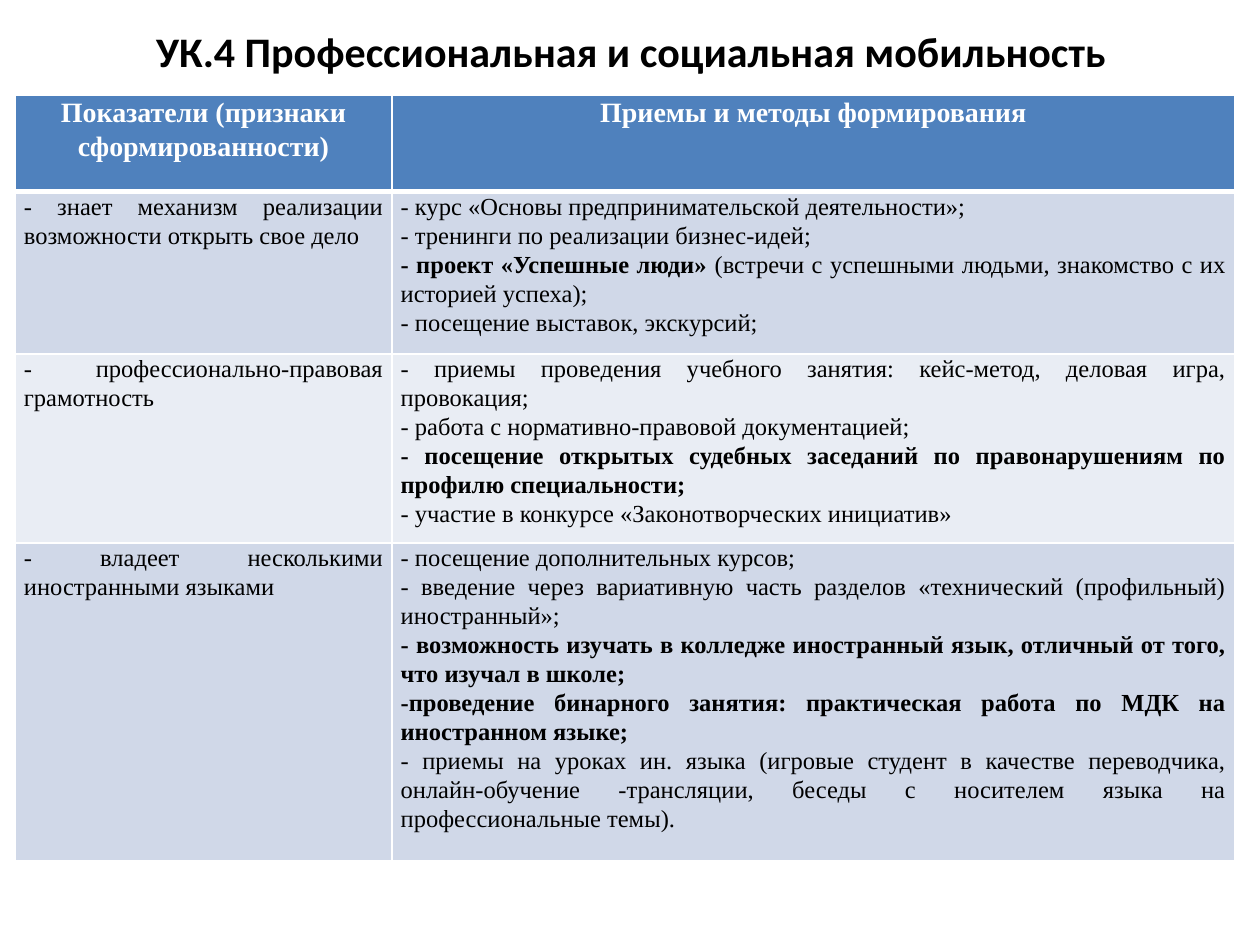
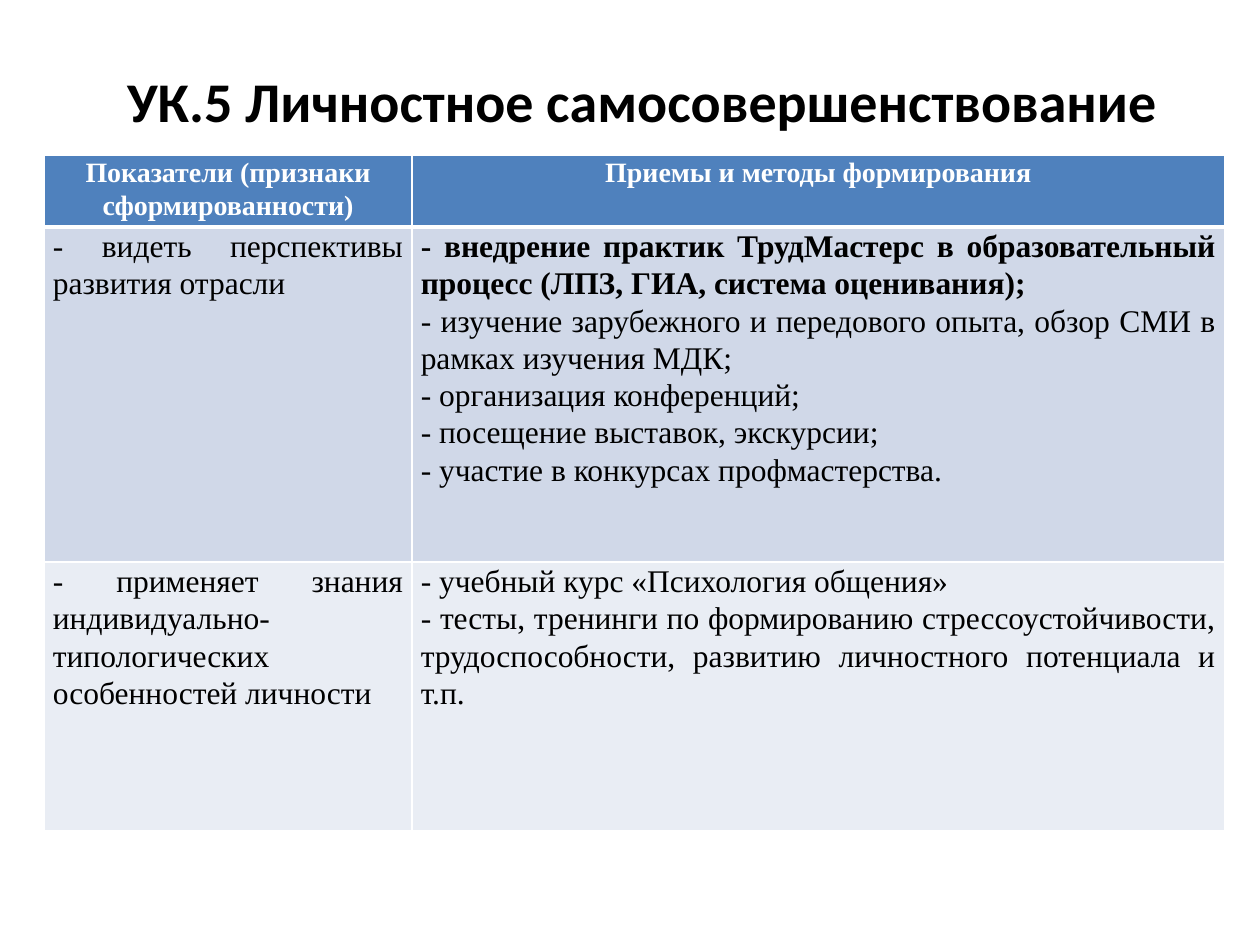
from dataclasses import dataclass

import lxml.etree
import pptx
import pptx.dml.color
import pptx.enum.text
import pptx.oxml.ns
import pptx.util

COLORS = {
    "background": "FFFFFF",
    "title": "000000",
    "body": "000000",
    "header_text": "FFFFFF",
    "header_fill": "4F81BD",
    "odd_row": "D0D8E8",
    "even_row": "E9EDF4",
    "border": "FFFFFF",
}
TITLE_FONT = "Calibri"
TABLE_FONT = "Times New Roman"
HEADER_SIZE = 16
LINE_SPACING = 1.07
SLIDE_WIDTH = pptx.util.Inches(10)
SLIDE_HEIGHT = pptx.util.Inches(7.5)
GRID_COLUMNS = 100
GRID_ROWS = 75
CENTER = pptx.enum.text.PP_ALIGN.CENTER
JUSTIFY = pptx.enum.text.PP_ALIGN.JUSTIFY


@dataclass(frozen=True)
class Area:
    column: float
    row: float
    columns: float
    rows: float


@dataclass(frozen=True)
class Line:
    plain: str = ""
    bold: str = ""


@dataclass(frozen=True)
class Indicator:
    sign: str
    methods: tuple[Line, ...]


@dataclass(frozen=True)
class Competence:
    title: str
    title_area: Area
    title_size: int
    table_column: float
    table_row: float
    column_widths: tuple[float, float]
    row_heights: tuple[float, ...]
    body_size: int
    indicators: tuple[Indicator, ...]


HEADERS = ("Показатели (признаки сформированности)", "Приемы и методы формирования")

COMPETENCES = (
    Competence(
        title="УК.4 Профессиональная и социальная мобильность",
        title_area=Area(5.1, 1.3, 90, 5.5),
        title_size=24,
        table_column=1.2,
        table_row=7.6,
        column_widths=(29.9, 66.9),
        row_heights=(7.6, 12.9, 15, 25.2),
        body_size=14,
        indicators=(
            Indicator("- знает механизм реализации возможности открыть свое дело", (
                Line("- курс «Основы предпринимательской деятельности»;"),
                Line("- тренинги по реализации бизнес-идей;"),
                Line("(встречи с успешными людьми, знакомство с их историей успеха);",
                     bold="- проект «Успешные люди» "),
                Line("- посещение выставок, экскурсий;"),
            )),
            Indicator("- профессионально-правовая грамотность", (
                Line("- приемы проведения учебного занятия: кейс-метод, деловая игра, провокация;"),
                Line("- работа с нормативно-правовой документацией;"),
                Line(bold="- посещение открытых судебных заседаний по правонарушениям "
                          "по профилю специальности;"),
                Line("- участие в конкурсе «Законотворческих инициатив»"),
            )),
            Indicator("- владеет несколькими иностранными языками", (
                Line("- посещение дополнительных курсов;"),
                Line("- введение через вариативную часть разделов "
                     "«технический (профильный) иностранный»;"),
                Line(bold="- возможность изучать в колледже иностранный язык, "
                          "отличный от того, что изучал в школе;"),
                Line(bold="-проведение бинарного занятия: практическая работа "
                          "по МДК на иностранном языке;"),
                Line("- приемы на уроках ин. языка (игровые студент в качестве переводчика, "
                     "онлайн-обучение -трансляции, беседы с носителем языка "
                     "на профессиональные темы)."),
            )),
        ),
    ),
    Competence(
        title="УК.5 Личностное самосовершенствование",
        title_area=Area(2, 5.2, 98, 5.5),
        title_size=32,
        table_column=3.5,
        table_row=12.3,
        column_widths=(29.2, 64.5),
        row_heights=(5.7, 26.6, 21.3),
        body_size=18,
        indicators=(
            Indicator("- видеть перспективы развития отрасли", (
                Line(bold="- внедрение практик ТрудМастерс в образовательный процесс "
                          "(ЛПЗ, ГИА, система оценивания);"),
                Line("- изучение зарубежного и передового опыта, обзор СМИ "
                     "в рамках изучения МДК;"),
                Line("- организация конференций;"),
                Line("- посещение выставок, экскурсии;"),
                Line("- участие в конкурсах профмастерства."),
            )),
            Indicator("- применяет знания индивидуально-типологических особенностей личности", (
                Line("- учебный курс «Психология общения»"),
                Line("- тесты, тренинги по формированию стрессоустойчивости, "
                     "трудоспособности, развитию личностного потенциала и т.п."),
            )),
        ),
    ),
)


def color(name: str) -> pptx.dml.color.RGBColor:
    return pptx.dml.color.RGBColor.from_string(COLORS[name])


def across(columns: float) -> int:
    return round(SLIDE_WIDTH * columns / GRID_COLUMNS)


def down(rows: float) -> int:
    return round(SLIDE_HEIGHT * rows / GRID_ROWS)


def style_font(font, name: str, size: int, color_name: str, bold: bool) -> None:
    font.name = name
    font.size = pptx.util.Pt(size)
    font.bold = bold
    font.color.rgb = color(color_name)


def draw_title(page, competence: Competence) -> None:
    area = competence.title_area
    box = page.shapes.add_textbox(
        across(area.column), down(area.row), across(area.columns), down(area.rows))
    frame = box.text_frame
    frame.word_wrap = True
    frame.vertical_anchor = pptx.enum.text.MSO_ANCHOR.MIDDLE
    frame.text = competence.title
    para = frame.paragraphs[0]
    para.alignment = CENTER
    style_font(para.runs[0].font, TITLE_FONT, competence.title_size, "title", True)


def set_borders(cell, top: int, bottom: int) -> None:
    properties = cell._tc.get_or_add_tcPr()
    widths = {"a:lnL": 1, "a:lnR": 1, "a:lnT": top, "a:lnB": bottom}
    for tag, width in widths.items():
        line = lxml.etree.SubElement(
            properties, pptx.oxml.ns.qn(tag), w=str(pptx.util.Pt(width)))
        fill = lxml.etree.SubElement(line, pptx.oxml.ns.qn("a:solidFill"))
        lxml.etree.SubElement(fill, pptx.oxml.ns.qn("a:srgbClr"), val=COLORS["border"])


def fill_cell(cell, lines: tuple[Line, ...], size: int, text_color: str,
              fill_color: str, alignment) -> None:
    cell.margin_left = cell.margin_right = pptx.util.Inches(0.07)
    cell.margin_top = cell.margin_bottom = 0
    cell.fill.solid()
    cell.fill.fore_color.rgb = color(fill_color)
    frame = cell.text_frame
    for index, line in enumerate(lines):
        para = frame.add_paragraph() if index else frame.paragraphs[0]
        para.alignment = alignment
        para.line_spacing = LINE_SPACING
        for text, bold in ((line.bold, True), (line.plain, False)):
            if text:
                span = para.add_run()
                span.text = text
                style_font(span.font, TABLE_FONT, size, text_color, bold)


def draw_table(page, competence: Competence) -> None:
    widths, heights = competence.column_widths, competence.row_heights
    table = page.shapes.add_table(
        len(heights), len(widths),
        across(competence.table_column), down(competence.table_row),
        across(sum(widths)), down(sum(heights))).table
    table.horz_banding = False
    for column, width in zip(table.columns, widths):
        column.width = across(width)
    for row, height in zip(table.rows, heights):
        row.height = down(height)

    for cell, header in zip(table.rows[0].cells, HEADERS):
        set_borders(cell, top=1, bottom=3)
        fill_cell(cell, (Line(bold=header),), HEADER_SIZE,
                  "header_text", "header_fill", CENTER)
    for index, indicator in enumerate(competence.indicators, start=1):
        row_fill = "odd_row" if index % 2 else "even_row"
        contents = ((Line(indicator.sign),), indicator.methods)
        for cell, lines in zip(table.rows[index].cells, contents):
            set_borders(cell, top=3 if index == 1 else 1, bottom=1)
            fill_cell(cell, lines, competence.body_size, "body", row_fill, JUSTIFY)


def main() -> None:
    deck = pptx.Presentation()
    deck.slide_width = SLIDE_WIDTH
    deck.slide_height = SLIDE_HEIGHT
    for competence in COMPETENCES:
        page = deck.slides.add_slide(deck.slide_layouts[6])
        page.background.fill.solid()
        page.background.fill.fore_color.rgb = color("background")
        draw_title(page, competence)
        draw_table(page, competence)
    deck.save("out.pptx")


if __name__ == "__main__":
    main()
